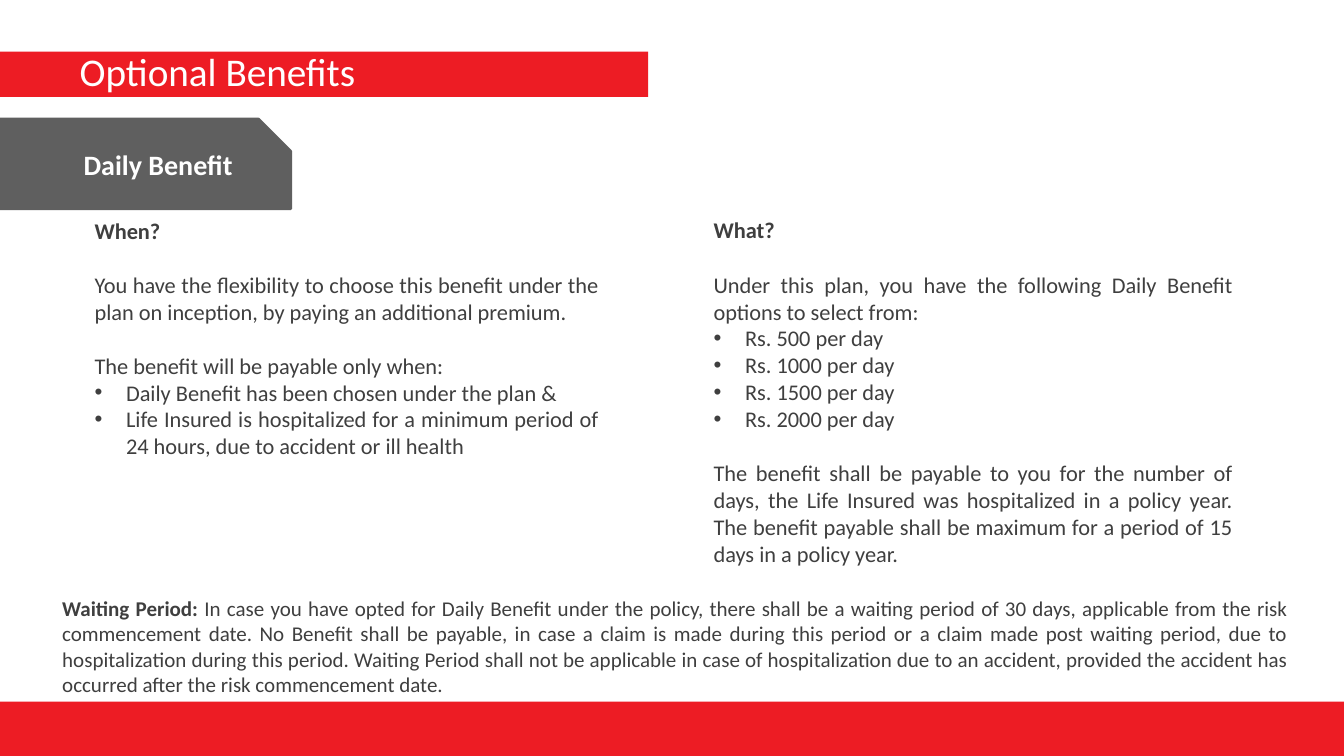
"""Build the Optional Benefits slide."""
from lxml import etree
from pptx import Presentation
from pptx.dml.color import RGBColor
from pptx.enum.shapes import MSO_SHAPE
from pptx.enum.text import MSO_ANCHOR, MSO_AUTO_SIZE, PP_ALIGN
from pptx.oxml.ns import qn
from pptx.util import Pt

RECT, SNIP = MSO_SHAPE.RECTANGLE, MSO_SHAPE.SNIP_1_RECTANGLE
LEFT, JUST = PP_ALIGN.LEFT, PP_ALIGN.JUSTIFY
MIDDLE, NO_FIT = MSO_ANCHOR.MIDDLE, MSO_AUTO_SIZE.NONE

WIDE, HIGH = 960, 540
RED, GREY, INK, WHITE = "ED1C24", "5F5F5F", "3F3F3F", "FFFFFF"
FONT, BODY, GAP, INDENT = "Calibri", 16, 19.5, 22.5

TITLE = "Optional Benefits"
TAG = "Daily Benefit"
COLUMNS = [
    (60.5, 374.4, 181.5, [
        ("head", "When?"),
        ("gap", "You have the flexibility to choose this benefit under the "
                "plan on inception, by paying an additional premium."),
        ("gap", "The benefit will be payable only when:"),
        ("item", "Daily Benefit has been chosen under the plan &"),
        ("item", "Life Insured is hospitalized for a minimum period of "
                 "24 hours, due to accident or ill health"),
    ]),
    (502.6, 385.2, 259.2, [
        ("head", "What?"),
        ("gap", "Under this plan, you have the following Daily Benefit "
                "options to select from:"),
        ("item", "Rs. 500 per day"),
        ("item", "Rs. 1000 per day"),
        ("item", "Rs. 1500 per day"),
        ("item", "Rs. 2000 per day"),
        ("gap", "The benefit shall be payable to you for the number of days, "
                "the Life Insured was hospitalized in a policy year. The "
                "benefit payable shall be maximum for a period of 15 days "
                "in a policy year."),
    ]),
]
WAIT = ("Waiting Period: ",
        "In case you have opted for Daily Benefit under the policy, there "
        "shall be a waiting period of 30 days, applicable from the risk "
        "commencement date. No Benefit shall be payable, in case a claim is "
        "made during this period or a claim made post waiting period, due to "
        "hospitalization during this period. Waiting Period shall not be "
        "applicable in case of hospitalization due to an accident, provided "
        "the accident has occurred after the risk commencement date.")


def color(code):
    return RGBColor.from_string(code)


def style(para, size, code, align=LEFT, bold=None):
    para.alignment = align
    font = para.font
    font.name, font.size, font.bold = FONT, Pt(size), bold
    font.color.rgb = color(code)


def panel(slide, kind, left, top, width, height, code):
    shape = slide.shapes.add_shape(
        kind, Pt(left), Pt(top), Pt(width), Pt(height))
    shape.shadow.inherit = False
    shape.fill.solid()
    shape.fill.fore_color.rgb = color(code)
    shape.line.fill.background()
    return shape


def text_box(slide, left, top, width, height):
    box = slide.shapes.add_textbox(Pt(left), Pt(top), Pt(width), Pt(height))
    box.text_frame.word_wrap = True
    return box.text_frame


def bullet(para):
    props = para._p.get_or_add_pPr()
    props.set("marL", str(Pt(INDENT)))
    props.set("indent", str(-Pt(INDENT)))
    etree.SubElement(props, qn("a:buFont")).set("typeface", "Arial")
    etree.SubElement(props, qn("a:buChar")).set("char", "•")


def column(slide, left, width, height, lines):
    frame = text_box(slide, left, 151.2, width, height)
    for i, (kind, text) in enumerate(lines):
        para = frame.add_paragraph() if i else frame.paragraphs[0]
        para.text = text
        if kind == "item":
            bullet(para)
        if kind == "gap":
            para.space_before = Pt(GAP)
        style(para, BODY, INK, JUST, kind == "head")


def heading(slide):
    title = slide.shapes.title
    title.left, title.top = Pt(49.7), Pt(23)
    title.width, title.height = Pt(673.9), Pt(55.4)
    frame = title.text_frame
    frame.text = TITLE
    frame.auto_size = NO_FIT
    frame.vertical_anchor = MIDDLE
    style(frame.paragraphs[0], 28, WHITE)
    slide.shapes._spTree.append(title._element)


def main():
    deck = Presentation()
    deck.slide_width, deck.slide_height = Pt(WIDE), Pt(HIGH)
    slide = deck.slides.add_slide(deck.slide_layouts[5])

    panel(slide, RECT, 0, 501.2, WIDE, 38.8, RED)
    panel(slide, RECT, 0, 36.8, 463, 32.4, RED)
    heading(slide)

    tag = panel(slide, SNIP, 0, 85, 207.6, 64.1, GREY)
    tag.adjustments[0] = 0.36
    tag.line.color.rgb = color(GREY)
    tag.line.width = Pt(2)
    label = text_box(slide, 52.6, 101.5, 164.2, 31.7)
    label.text = TAG
    style(label.paragraphs[0], 20, WHITE, bold=True)

    for spot in COLUMNS:
        column(slide, *spot)

    note = text_box(slide, 37.4, 421.9, 889.9, 79.9).paragraphs[0]
    for part in WAIT:
        note.add_run().text = part
    note.runs[0].font.bold = True
    style(note, 15, INK, JUST)

    deck.save("out.pptx")


if __name__ == "__main__":
    main()
